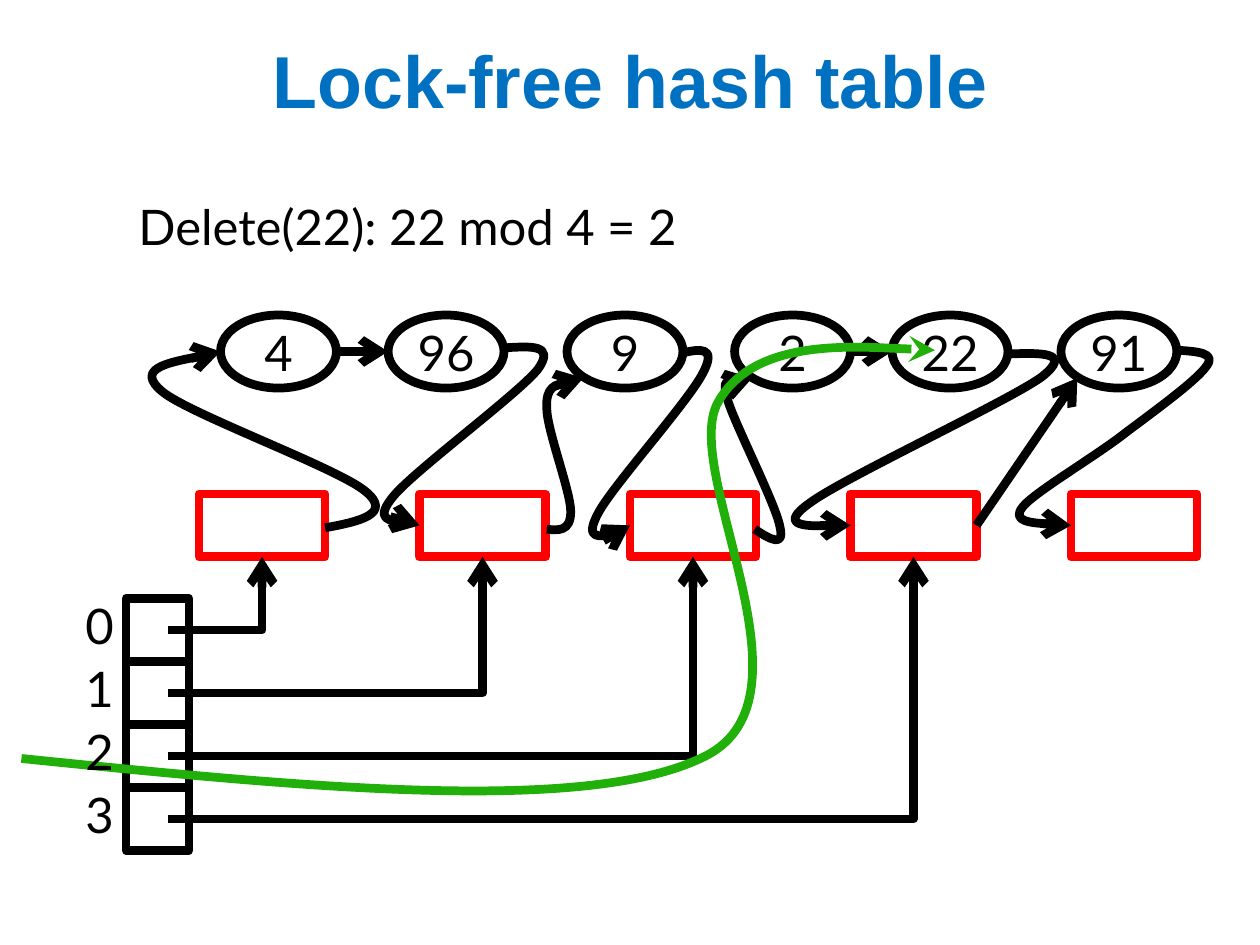
from lxml import etree
from pptx import Presentation
from pptx.dml.color import RGBColor
from pptx.enum import shapes, text
from pptx.oxml import ns
from pptx.util import Inches, Pt

TITLE = "Lock-free hash table"
OPERATION = "Delete(22): 22 mod 4 = 2"
BLACK, RED, GREEN, BLUE = "000000", "FF0000", "21AF09", "0070C0"

NODES = [("4", 1.75), ("96", 3.08), ("9", 4.5), ("2", 5.83), ("22", 7.08), ("91", 8.42)]
NODE_TOP, NODE_WIDTH, NODE_HEIGHT = 2.5, 0.92, 0.58
NODE_MIDDLE = NODE_TOP + NODE_HEIGHT / 2
NEXT_NODES = [(0, 1), (3, 4)]

BUCKET_LEFTS = [1.58, 3.33, 5, 6.75, 8.5]
BUCKET_TOP, BUCKET_WIDTH, BUCKET_HEIGHT = 3.92, 1, 0.5

TABLE_LEFT, TABLE_TOP, CELL = 1, 4.75, 0.5
SLOTS = ["0", "1", "2", "3"]
POINTER_LEFT = 1.33

# Start point followed by Bezier triples, then the arrow tip or the bucket it enters
LINKS = [
    ([(2.58, 4.19), (2.85, 4.14), (3.12, 4.08), (2.9, 3.9), (2.69, 3.72), (1.51, 3.29),
      (1.29, 3.11), (1.07, 2.93), (1.32, 2.88), (1.58, 2.83)], (1.75, 2.79)),
    ([(4.01, 2.76), (4.21, 2.75), (4.41, 2.73), (4.27, 2.93), (4.12, 3.12), (3.31, 3.72),
      (3.13, 3.93), (2.96, 4.13), (3.09, 4.14), (3.23, 4.14)], 1),
    ([(4.34, 4.2), (4.43, 4.21), (4.53, 4.22), (4.53, 4.06), (4.53, 3.9), (4.34, 3.41),
      (4.34, 3.24), (4.33, 3.07), (4.41, 3.05), (4.49, 3.04)], (4.63, 3)),
    ([(5.42, 2.8), (5.56, 2.77), (5.69, 2.75), (5.58, 2.96), (5.47, 3.18), (4.86, 3.86),
      (4.75, 4.07), (4.63, 4.29), (4.76, 4.26), (4.88, 4.24)], 2),
    ([(5.99, 4.2), (6.11, 4.28), (6.23, 4.35), (6.19, 4.18), (6.16, 4.01), (5.84, 3.38),
      (5.78, 3.19), (5.72, 3), (5.78, 3.02), (5.83, 3.04)], (5.97, 3)),
    ([(7.99, 2.81), (8.26, 2.8), (8.52, 2.79), (8.27, 2.99), (8.01, 3.18), (6.7, 3.79),
      (6.43, 3.99), (6.16, 4.18), (6.4, 4.18), (6.64, 4.17)], 3),
    ([(9.35, 2.78), (9.5, 2.79), (9.65, 2.8), (9.58, 2.9), (9.51, 3.01), (9.18, 3.25),
      (8.94, 3.43), (8.7, 3.62), (8.22, 3.9), (8.12, 4.02), (8.02, 4.14), (8.18, 4.15),
      (8.34, 4.16)], 4),
]
SEARCH_PATH = [(0.17, 6.02), (2.42, 6.25), (4.68, 6.47), (5.6, 6), (6.53, 5.53),
               (5.39, 3.73), (5.7, 3.19), (6, 2.66), (7.42, 2.78), (7.42, 2.78)]


def rgb(color):
    return RGBColor.from_string(color)


def style_line(line, color=BLACK, arrow=None):
    line.width = Pt(5)
    line.fill.solid()
    line.fill.fore_color.rgb = rgb(color)
    properties = line._get_or_add_ln()
    etree.SubElement(properties, ns.qn("a:round"))
    if arrow:
        etree.SubElement(properties, ns.qn("a:tailEnd"), type=arrow)


def add_text(frame, content, size=28, font="Lato", color=BLACK, bold=False, align=None):
    paragraph = frame.paragraphs[0]
    paragraph.alignment = align
    run = paragraph.add_run()
    run.text = content
    run.font.size = Pt(size)
    run.font.name = font
    run.font.bold = bold
    run.font.color.rgb = rgb(color)


def add_outline(kind, left, top, width, height, color=BLACK):
    shape = slide.shapes.add_shape(kind, *map(Inches, (left, top, width, height)))
    shape.shadow.inherit = False
    shape.fill.background()
    style_line(shape.line, color)
    return shape


def add_line(start, end, arrow=None, kind=shapes.MSO_CONNECTOR.STRAIGHT):
    connector = slide.shapes.add_connector(kind, *map(Inches, (*start, *end)))
    style_line(connector.line, arrow=arrow)
    etree.SubElement(connector._element.spPr, ns.qn("a:effectLst"))
    return connector


def add_curve(points, color=BLACK, arrow=None):
    """Draw a freeform whose segments are turned into cubic Beziers, three points each."""
    start, *controls = [(Inches(x), Inches(y)) for x, y in points]
    builder = slide.shapes.build_freeform(*start)
    builder.add_line_segments(controls, close=False)
    shape = builder.convert_to_shape()
    outline = next(shape._element.iter(ns.qn("a:path")))
    segments = outline.findall(ns.qn("a:lnTo"))
    for first in range(0, len(segments), 3):
        curve = etree.SubElement(outline, ns.qn("a:cubicBezTo"))
        for segment in segments[first:first + 3]:
            curve.append(segment[0])
            outline.remove(segment)
    shape.shadow.inherit = False
    shape.fill.background()
    style_line(shape.line, color, arrow)


def add_label(content, left, top, width):
    box = slide.shapes.add_textbox(*map(Inches, (left, top, width, 0.57)))
    box.text_frame.word_wrap = False
    box.text_frame.auto_size = text.MSO_AUTO_SIZE.SHAPE_TO_FIT_TEXT
    add_text(box.text_frame, content)


presentation = Presentation()
presentation.slide_width, presentation.slide_height = Inches(10), Inches(7.5)
slide = presentation.slides.add_slide(presentation.slide_layouts[5])

title = slide.shapes.title
title.left, title.top, title.width, title.height = map(Inches, (0, 0, 10, 1.25))
title.text_frame.vertical_anchor = text.MSO_ANCHOR.MIDDLE
add_text(title.text_frame, TITLE, 42, "Arial", BLUE, True, text.PP_ALIGN.CENTER)

rectangle = shapes.MSO_SHAPE.RECTANGLE
table = add_outline(rectangle, TABLE_LEFT, TABLE_TOP, CELL, CELL * len(SLOTS))
for row in range(1, len(SLOTS)):
    y = TABLE_TOP + row * CELL
    divider = add_line((TABLE_LEFT, y), (TABLE_LEFT + CELL, y))
    if row * 2 == len(SLOTS):
        divider.begin_connect(table, 1)
        divider.end_connect(table, 3)

buckets = [add_outline(rectangle, left, BUCKET_TOP, BUCKET_WIDTH, BUCKET_HEIGHT, RED)
           for left in BUCKET_LEFTS]

for value, left in NODES:
    node = add_outline(shapes.MSO_SHAPE.OVAL, left, NODE_TOP, NODE_WIDTH, NODE_HEIGHT)
    node.text_frame.word_wrap = False
    node.text_frame.vertical_anchor = text.MSO_ANCHOR.MIDDLE
    add_text(node.text_frame, value, align=text.PP_ALIGN.CENTER)

for source, target in NEXT_NODES:
    add_line((NODES[source][1] + NODE_WIDTH, NODE_MIDDLE), (NODES[target][1], NODE_MIDDLE), "arrow")

bucket_middle = BUCKET_TOP + BUCKET_HEIGHT / 2
for points, target in LINKS:
    add_curve(points)
    if isinstance(target, tuple):
        add_line(points[-1], target, "arrow")
    else:
        tip = add_line(points[-1], (BUCKET_LEFTS[target], bucket_middle), "arrow")
        tip.end_connect(buckets[target], 1)

last_link = add_line((BUCKET_LEFTS[3] + BUCKET_WIDTH, bucket_middle), (8.55, 3), "arrow")
last_link.begin_connect(buckets[3], 3)

for row, left in enumerate(BUCKET_LEFTS[:len(SLOTS)]):
    pointer = add_line((POINTER_LEFT, TABLE_TOP + (row + 0.5) * CELL),
                       (left + BUCKET_WIDTH / 2, BUCKET_TOP + BUCKET_HEIGHT),
                       "arrow", shapes.MSO_CONNECTOR.ELBOW)
    pointer._element.spPr.find(ns.qn("a:prstGeom")).set("prst", "bentConnector2")
    pointer.end_connect(buckets[row], 2)

add_label(OPERATION, 1, 1.51, 4.69)
add_curve(SEARCH_PATH, GREEN, "stealth")
for row, slot in enumerate(SLOTS):
    add_label(slot, 0.58, 4.68 + row * CELL, 0.42)

presentation.save("out.pptx")
